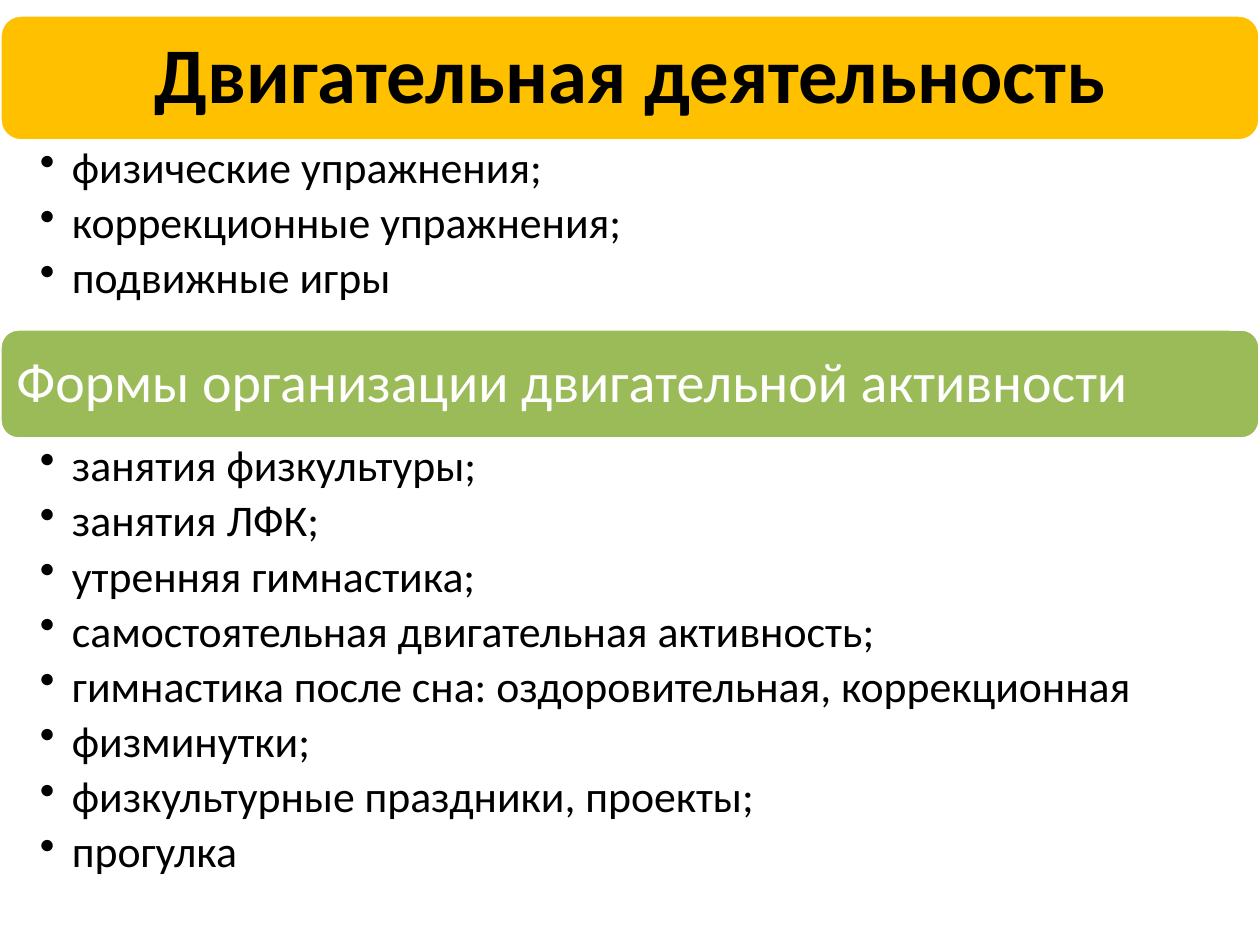
from lxml import etree
from pptx import Presentation, util as u
from pptx.dml.color import RGBColor
from pptx.enum import shapes, text
from pptx.oxml.ns import qn

COLORS = {"amber": "FFC000", "green": "9BBB59", "white": "FFFFFF", "black": "000000"}
SECTIONS = [
    {
        "title": "Двигательная деятельность",
        "fill": "amber",
        "bar_height": 126,
        "list_height": 188,
        "format": {"size": 45, "color": "black", "bold": True, "align": text.PP_ALIGN.CENTER},
        "items": ["физические упражнения;", "коррекционные упражнения;", "подвижные игры"],
    },
    {
        "title": "Формы организации двигательной активности",
        "fill": "green",
        "bar_height": 110,
        "list_height": 489,
        "format": {"size": 32, "color": "white"},
        "items": [
            "занятия физкультуры;",
            "занятия ЛФК;",
            "утренняя гимнастика;",
            "самостоятельная двигательная активность;",
            "гимнастика после сна: оздоровительная, коррекционная",
            "физминутки;",
            "физкультурные праздники, проекты;",
            "прогулка",
        ],
    },
]
WIDTH, HEIGHT, TOP = 1260, 945, 15
BULLET_INDENT = 32


def px(n):
    return u.Emu(n * 914400 // 126)


def rgb(name):
    return RGBColor.from_string(COLORS[name])


def write(shape, lines, size, color, margins, bold=False, align=text.PP_ALIGN.LEFT,
          anchor=text.MSO_ANCHOR.TOP, bullet=False, space_after=0):
    frame = shape.text_frame
    frame.word_wrap = True
    frame.vertical_anchor = anchor
    (frame.margin_left, frame.margin_top,
     frame.margin_right, frame.margin_bottom) = map(px, margins)
    for i, line in enumerate(lines):
        paragraph = frame.add_paragraph() if i else frame.paragraphs[0]
        paragraph.alignment = align
        paragraph.line_spacing = 0.9
        paragraph.space_after = u.Pt(space_after)
        run = paragraph.add_run()
        run.text = line
        font = run.font
        font.name, font.size, font.bold = "Calibri", u.Pt(size), bold
        font.color.rgb = rgb(color)
        if bullet:
            paragraph.level = 1
            props = paragraph._p.get_or_add_pPr()
            props.set("marL", str(px(BULLET_INDENT)))
            props.set("indent", str(-px(BULLET_INDENT)))
            etree.SubElement(props, qn("a:buChar"), char="•")


def add_bar(slide, section, top):
    bar = slide.shapes.add_shape(shapes.MSO_SHAPE.ROUNDED_RECTANGLE,
                                 0, px(top), px(WIDTH), px(section["bar_height"]))
    bar.shadow.inherit = False
    bar.fill.solid()
    bar.fill.fore_color.rgb = rgb(section["fill"])
    bar.line.color.rgb = rgb("white")
    bar.line.width = u.Pt(2)
    write(bar, [section["title"]], margins=(11, 11, 11, 11),
          anchor=text.MSO_ANCHOR.MIDDLE, **section["format"])


def add_list(slide, section, top):
    box = slide.shapes.add_textbox(0, px(top), px(WIDTH), px(section["list_height"]))
    write(box, section["items"], 25, "black", margins=(40, 5, 32, 5),
          bullet=True, space_after=4.5)


def main():
    deck = Presentation()
    deck.slide_width, deck.slide_height = px(WIDTH), px(HEIGHT)
    slide = deck.slides.add_slide(deck.slide_layouts[6])
    top = TOP
    for section in SECTIONS:
        add_bar(slide, section, top)
        top += section["bar_height"]
        add_list(slide, section, top)
        top += section["list_height"]
    deck.save("out.pptx")


if __name__ == "__main__":
    main()
